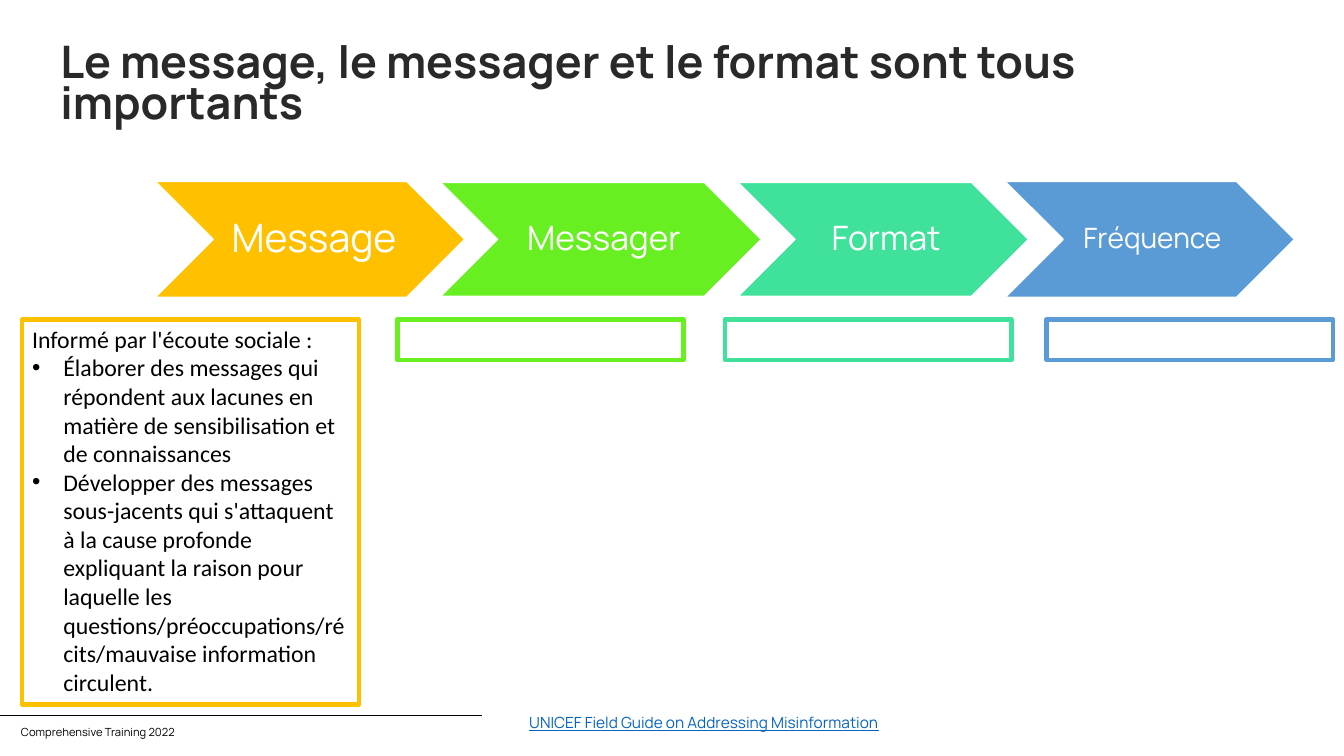
from dataclasses import dataclass

from lxml.etree import SubElement
from pptx import Presentation
from pptx.dml.color import RGBColor
from pptx.enum.shapes import MSO_CONNECTOR, MSO_SHAPE
from pptx.enum.text import MSO_ANCHOR as ANCHOR, MSO_AUTO_SIZE as AUTO_SIZE, PP_ALIGN as ALIGN
from pptx.oxml.ns import qn
from pptx.shapes.autoshape import Shape
from pptx.slide import Slide
from pptx.text.text import TextFrame, _Paragraph as Paragraph
from pptx.util import Inches, Pt

BLACK = RGBColor(0x00, 0x00, 0x00)
WHITE = RGBColor(0xFF, 0xFF, 0xFF)
CHARCOAL = RGBColor(0x29, 0x29, 0x29)
LINK_BLUE = RGBColor(0x05, 0x63, 0xC1)
AMBER = RGBColor(0xFF, 0xC0, 0x00)
LIME = RGBColor(0x67, 0xEF, 0x21)
MINT = RGBColor(0x3F, 0xE1, 0x9B)
SKY = RGBColor(0x5B, 0x9B, 0xD5)

HEADING_FONT = "Manrope"
BODY_FONT = "Calibri"
CHEVRON_MIDDLE = 2.375
PANEL_TOP = 3.17
BULLET_INDENT = 0.31


@dataclass(frozen=True)
class Stage:
    label: str
    color: RGBColor
    left: float
    width: float
    height: float
    size: int
    inset: float
    panel_left: float
    panel_width: float = 2.84
    panel_height: float = 0.4


STAGES = [
    Stage("Message", AMBER, 1.54, 3.07, 1.15, 28, 0.12, 0.22, 3.34, 3.82),
    Stage("Messager", LIME, 4.37, 3.18, 1.13, 24, 0.1, 3.94),
    Stage("Format", MINT, 7.32, 2.88, 1.13, 24, 0.1, 7.19),
    Stage("Fréquence", SKY, 9.97, 2.87, 1.15, 20, 0.09, 10.38),
]

MESSAGE_INTRO = "Informé par l'écoute sociale :"
MESSAGE_POINTS = [
    "Élaborer des messages qui répondent aux lacunes en matière de sensibilisation "
    "et de connaissances",
    "Développer des messages sous-jacents qui s'attaquent à la cause profonde "
    "expliquant la raison pour laquelle les questions/préoccupations/récits/mauvaise "
    "information circulent.",
]


def add_run(paragraph: Paragraph, text: str, size: float, color: RGBColor,
            font: str = HEADING_FONT, bold: bool = False, underline: bool = False) -> None:
    run = paragraph.add_run()
    run.text = text
    run.font.name = font
    run.font.size = Pt(size)
    run.font.bold = bold
    run.font.underline = underline
    run.font.color.rgb = color


def add_text_box(slide: Slide, left: float, top: float, width: float, height: float) -> TextFrame:
    frame = slide.shapes.add_textbox(
        Inches(left), Inches(top), Inches(width), Inches(height)).text_frame
    frame.word_wrap = True
    return frame


def add_filled_shape(slide: Slide, preset: MSO_SHAPE, left: float, top: float, width: float,
                     height: float, fill: RGBColor, line: RGBColor, line_width: float) -> Shape:
    shape = slide.shapes.add_shape(
        preset, Inches(left), Inches(top), Inches(width), Inches(height))
    shape.shadow.inherit = False
    shape.fill.solid()
    shape.fill.fore_color.rgb = fill
    shape.line.color.rgb = line
    shape.line.width = Pt(line_width)
    return shape


def add_chevron(slide: Slide, stage: Stage) -> None:
    chevron = add_filled_shape(
        slide, MSO_SHAPE.CHEVRON, stage.left, CHEVRON_MIDDLE - stage.height / 2,
        stage.width, stage.height, stage.color, WHITE, 1)
    frame = chevron.text_frame
    frame.vertical_anchor = ANCHOR.MIDDLE
    frame.margin_left = Inches(stage.inset)
    frame.margin_top = frame.margin_right = frame.margin_bottom = Inches(0.04)
    label = frame.paragraphs[0]
    label.alignment = ALIGN.CENTER
    label.line_spacing = 0.9
    add_run(label, stage.label, stage.size, WHITE)


def add_panel(slide: Slide, stage: Stage) -> Shape:
    return add_filled_shape(
        slide, MSO_SHAPE.RECTANGLE, stage.panel_left, PANEL_TOP,
        stage.panel_width, stage.panel_height, WHITE, stage.color, 3.25)


def make_bullet(paragraph: Paragraph) -> None:
    properties = paragraph._p.get_or_add_pPr()
    properties.set("marL", str(Inches(BULLET_INDENT)))
    properties.set("indent", str(-Inches(BULLET_INDENT)))
    SubElement(properties, qn("a:buFont"), typeface="Arial")
    SubElement(properties, qn("a:buChar"), char="•")


def fill_message_panel(panel: Shape) -> None:
    frame = panel.text_frame
    frame.word_wrap = True
    frame.auto_size = AUTO_SIZE.SHAPE_TO_FIT_TEXT
    frame.vertical_anchor = ANCHOR.TOP
    intro = frame.paragraphs[0]
    intro.alignment = ALIGN.LEFT
    add_run(intro, MESSAGE_INTRO, 17, BLACK, BODY_FONT)
    for point in MESSAGE_POINTS:
        bullet = frame.add_paragraph()
        make_bullet(bullet)
        bullet.alignment = ALIGN.LEFT
        add_run(bullet, point, 17, BLACK, BODY_FONT)


def add_title(slide: Slide) -> None:
    frame = add_text_box(slide, 0.5, 0.35, 12.44, 0.85)
    frame.margin_top = Inches(0.1)
    title = frame.paragraphs[0]
    title.line_spacing = 0.77
    add_run(title, "Le message, le messager et le format sont tous importants",
            32, CHARCOAL, bold=True)


def add_footer(slide: Slide) -> None:
    rule = slide.shapes.add_connector(
        MSO_CONNECTOR.STRAIGHT, Inches(0), Inches(7.1), Inches(4.78), Inches(7.1))
    rule.line.color.rgb = BLACK
    rule.line.width = Pt(0.5)
    SubElement(rule._element.spPr, qn("a:effectLst"))
    course = add_text_box(slide, 0.11, 7.15, 4.39, 0.24)
    add_run(course.paragraphs[0], "Comprehensive Training 2022", 8, BLACK)
    reference = add_text_box(slide, 5.15, 7.03, 6.62, 0.29)
    add_run(reference.paragraphs[0], "UNICEF Field Guide on Addressing Misinformation",
            11, LINK_BLUE, underline=True)


def main() -> None:
    deck = Presentation()
    deck.slide_width = Inches(13.33)
    deck.slide_height = Inches(7.5)
    slide = deck.slides.add_slide(deck.slide_layouts[6])
    add_footer(slide)
    add_title(slide)
    for stage in STAGES:
        add_chevron(slide, stage)
    message_panel, *_ = [add_panel(slide, stage) for stage in STAGES]
    fill_message_panel(message_panel)
    deck.save("out.pptx")


if __name__ == "__main__":
    main()
